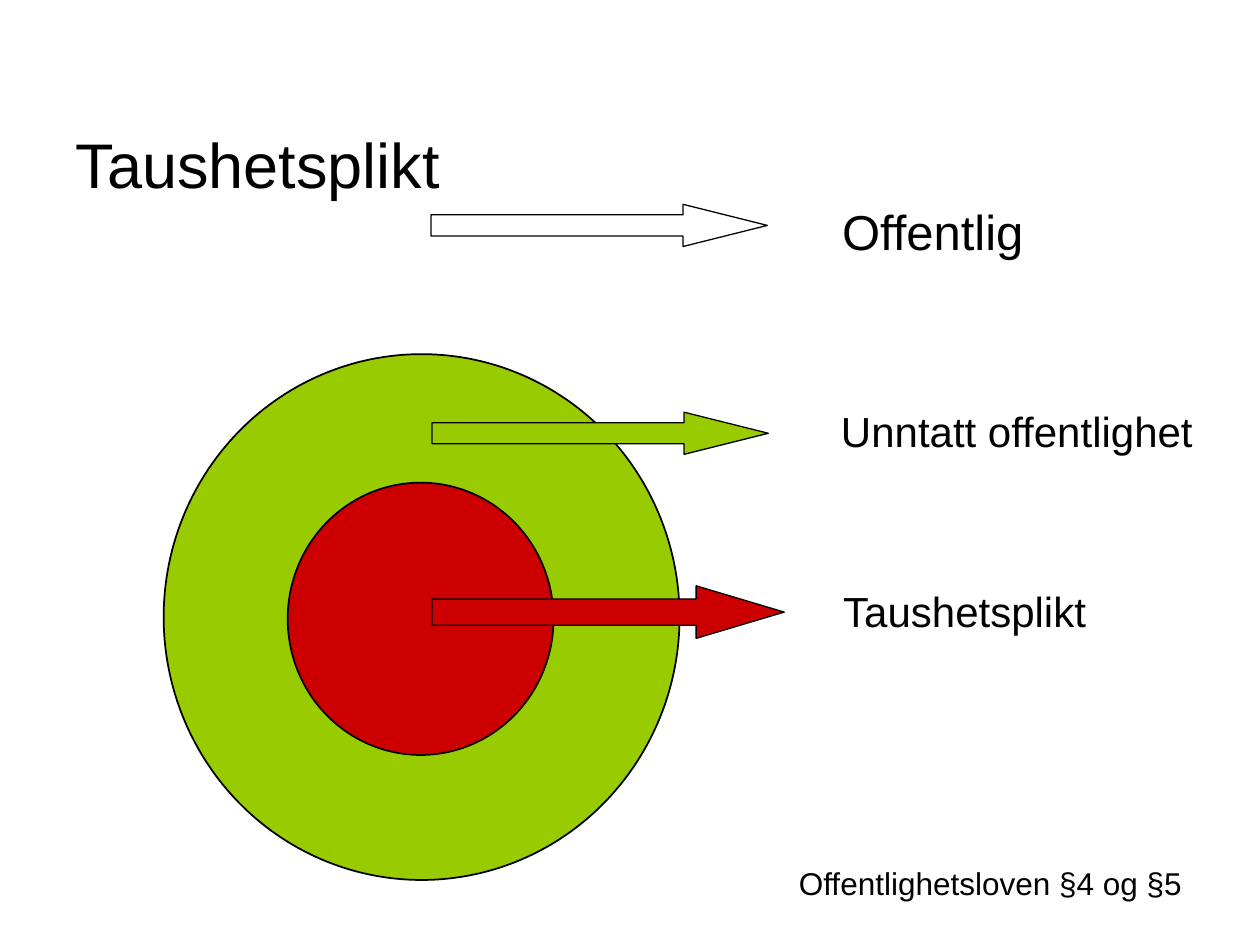
import pptx
import pptx.util
import pptx.dml.color
import pptx.enum.shapes
import pptx.enum.text

Cm = pptx.util.Cm
Pt = pptx.util.Pt
Kind = pptx.enum.shapes.MSO_SHAPE
Align = pptx.enum.text.PP_ALIGN
Anchor = pptx.enum.text.MSO_ANCHOR

BLACK, GREEN, RED = "000000", "99CC00", "CC0000"


def color(code):
    return pptx.dml.color.RGBColor.from_string(code)


def write(frame, text, size=24, font="Arial", ink=BLACK,
          align=Align.CENTER, anchor=Anchor.TOP, wrap=False):
    frame.word_wrap = wrap
    frame.vertical_anchor = anchor
    para = frame.paragraphs[0]
    para.alignment = align
    run = para.add_run()
    run.text = text
    run.font.size = Pt(size)
    run.font.name = font
    run.font.color.rgb = color(ink)


class Board:
    """Holds the line style and the slide being drawn; lengths are in cm."""

    def __init__(self, slide, line=BLACK):
        self.slide = slide
        self.line = line

    def title(self, text, left, top, width, height):
        head = self.slide.shapes.title
        head.left, head.top = Cm(left), Cm(top)
        head.width, head.height = Cm(width), Cm(height)
        write(head.text_frame, text, size=36, align=Align.LEFT,
              anchor=Anchor.MIDDLE, wrap=True)

    def shape(self, kind, left, top, width, height, fill, weight):
        item = self.slide.shapes.add_shape(
            kind, Cm(left), Cm(top), Cm(width), Cm(height))
        item.shadow.inherit = False
        if fill:
            item.fill.solid()
            item.fill.fore_color.rgb = color(fill)
        else:
            item.fill.background()
        item.line.color.rgb = color(self.line)
        item.line.width = Pt(weight)
        return item

    def disc(self, left, top, width, height, fill):
        self.shape(Kind.OVAL, left, top, width, height, fill, 1)

    def arrow(self, left, top, width, height, fill=None, head=2):
        """Draw a right arrow whose head is `head` times its height."""
        item = self.shape(Kind.RIGHT_ARROW, left, top, width, height,
                          fill, 0.75)
        item.adjustments[0] = 0.5
        item.adjustments[1] = head

    def label(self, text, left, top, width, height, **form):
        box = self.slide.shapes.add_textbox(
            Cm(left), Cm(top), Cm(width), Cm(height))
        box.text_frame.auto_size = pptx.enum.text.MSO_AUTO_SIZE.SHAPE_TO_FIT_TEXT
        write(box.text_frame, text, **form)


def main():
    deck = pptx.Presentation()
    deck.slide_width, deck.slide_height = Cm(25.4), Cm(19.05)
    board = Board(deck.slides.add_slide(deck.slide_layouts[5]))

    board.title("Taushetsplikt", 1.27, 1.7, 20.96, 3.18)
    board.disc(3.3, 7.14, 10.4, 10.6, GREEN)
    board.disc(5.8, 9.73, 5.36, 5.49, RED)

    board.arrow(8.71, 11.81, 7.1, 1.06, RED, head=1.675)
    board.arrow(8.71, 8.31, 6.78, 0.85, GREEN)
    board.arrow(8.69, 4.12, 6.78, 0.85)

    board.label("Offentlig", 16.71, 3.94, 4.19, 1.45, size=28,
                anchor=Anchor.MIDDLE)
    board.label("Taushetsplikt", 16.69, 11.68, 5.51, 1.27)
    board.label("Unntatt offentlighet", 16.69, 8.05, 7.62, 1.27)
    board.label("Offentlighetsloven §4 og §5", 15.85, 17.3, 8.23, 1.02,
                size=18)

    deck.save("out.pptx")


if __name__ == "__main__":
    main()
